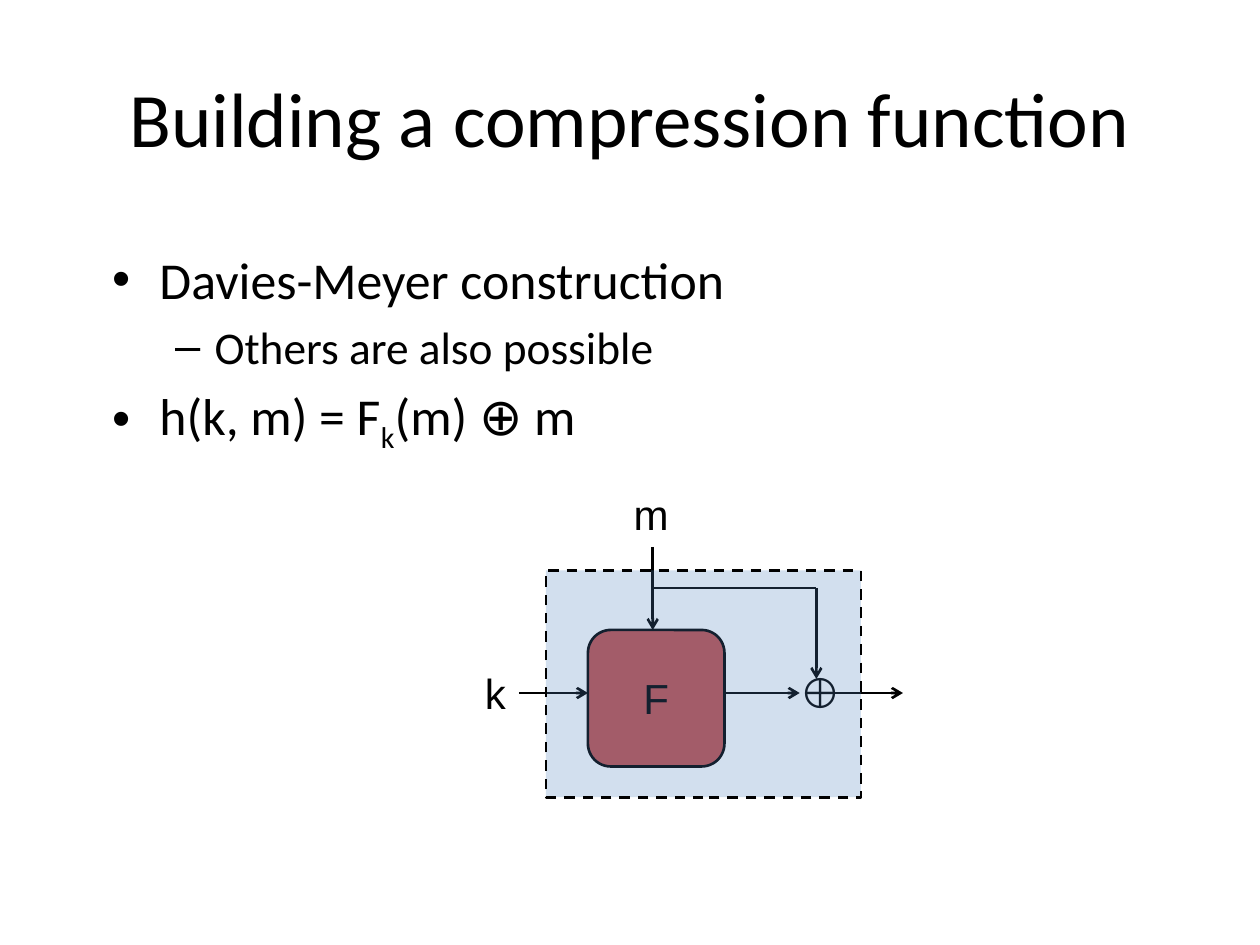
from lxml import etree
from pptx import Presentation
from pptx.dml.color import RGBColor
from pptx.enum.dml import MSO_LINE
from pptx.enum.shapes import MSO_CONNECTOR, MSO_SHAPE
from pptx.enum.text import MSO_ANCHOR, MSO_AUTO_SIZE, PP_ALIGN
from pptx.oxml.ns import qn
from pptx.util import Pt

BLACK = RGBColor(0x00, 0x00, 0x00)
RED = RGBColor(0xC0, 0x50, 0x4D)
BLUE = RGBColor(0x4F, 0x81, 0xBD)
RECTANGLE = MSO_SHAPE.RECTANGLE
ROUNDED = MSO_SHAPE.ROUNDED_RECTANGLE
STRAIGHT = MSO_CONNECTOR.STRAIGHT
DASH = MSO_LINE.DASH
MIDDLE = MSO_ANCHOR.MIDDLE
TOP = MSO_ANCHOR.TOP
CENTER = PP_ALIGN.CENTER
FIT_SHAPE = MSO_AUTO_SIZE.SHAPE_TO_FIT_TEXT

TITLE_FONT = {"name": "Calibri", "size": Pt(44)}
LABEL_FONT = {"name": "Arial", "size": Pt(24)}
LEVELS = (
    {"size": 29.6, "margin": 27, "hanging": 27, "bullet": "•"},
    {"size": 25.9, "margin": 58.5, "hanging": 22.5, "bullet": "–"},
)


def assign(target, values):
    for name, value in values.items():
        setattr(target, name, value)


class SlideBuilder:
    def __init__(self, slide):
        self.slide = slide
        self.line_format = {"width": Pt(1.5)}

    def text_box(self, box, frame_format):
        shape = self.slide.shapes.add_textbox(*map(Pt, box))
        assign(shape.text_frame, frame_format)
        return shape.text_frame

    def run(self, paragraph, text, font, baseline=0):
        run = paragraph.add_run()
        run.text = text
        assign(run.font, font)
        run.font.color.rgb = BLACK
        if baseline:
            run.font._element.set("baseline", str(baseline * 1000))

    def title(self, text, box):
        frame = self.text_box(box, {"word_wrap": True, "vertical_anchor": MIDDLE})
        frame.paragraphs[0].alignment = CENTER
        self.run(frame.paragraphs[0], text, TITLE_FONT)

    def bullets(self, items, box):
        frame = self.text_box(box, {"word_wrap": True, "vertical_anchor": TOP})
        for index, (level, runs) in enumerate(items):
            paragraph = frame.add_paragraph() if index else frame.paragraphs[0]
            style = LEVELS[level]
            assign(paragraph, {"level": level, "space_before": Pt(style["size"] * 0.2)})
            properties = paragraph._p.get_or_add_pPr()
            properties.set("marL", str(Pt(style["margin"])))
            properties.set("indent", str(-Pt(style["hanging"])))
            etree.SubElement(properties, qn("a:buFont"), typeface="Arial")
            etree.SubElement(properties, qn("a:buChar"), char=style["bullet"])
            font = {"name": "Calibri", "size": Pt(style["size"])}
            for text, baseline in runs:
                self.run(paragraph, text, font, baseline)

    def label(self, text, box):
        frame = self.text_box(box, {"word_wrap": False, "auto_size": FIT_SHAPE})
        self.run(frame.paragraphs[0], text, LABEL_FONT)

    def outline(self, line):
        assign(line, self.line_format)
        line.color.rgb = BLACK

    def block(self, kind, box, color, opacity=100):
        shape = self.slide.shapes.add_shape(kind, *map(Pt, box))
        shape.shadow.inherit = False
        shape.fill.solid()
        shape.fill.fore_color.rgb = color
        self.outline(shape.line)
        if opacity < 100:
            color_element = shape._element.spPr.find(".//" + qn("a:srgbClr"))
            etree.SubElement(color_element, qn("a:alpha"), val=str(opacity * 1000))
        return shape

    def connector(self, start, end, arrow=True):
        shape = self.slide.shapes.add_connector(STRAIGHT, *map(Pt, start + end))
        self.outline(shape.line)
        if arrow:
            etree.SubElement(shape.line._get_or_add_ln(), qn("a:tailEnd"), type="arrow")
        etree.SubElement(shape._element.spPr, qn("a:effectLst"))


def main():
    presentation = Presentation()
    assign(presentation, {"slide_width": Pt(720), "slide_height": Pt(540)})
    slide = presentation.slides.add_slide(presentation.slide_layouts[6])
    builder = SlideBuilder(slide)

    builder.title("Building a compression function", (36, 21.6, 648, 90))
    builder.bullets(
        (
            (0, [("Davies-Meyer construction", 0)]),
            (1, [("Others are also possible", 0)]),
            (0, [("h(k, m) = F", 0), ("k", -25), ("(m) ⊕ m", 0)]),
        ),
        (57, 138, 605.5, 117),
    )

    message_x, output_x = 373, 466.5
    branch_y, middle_y = 336, 396
    function_box = builder.block(ROUNDED, (336, 360, 78, 78), RED)
    function_box.adjustments[0] = 0.167
    for text, left, top, width in (
        ("F", 360.5, 381, 29.5),
        ("k", 270, 378, 26.6),
        ("m", 355, 275.8, 34.6),
        ("⊕", 450, 377.3, 33),
    ):
        builder.label(text, (left, top, width, 36.7))

    builder.connector((message_x, branch_y), (output_x, branch_y), arrow=False)
    builder.connector((message_x, 312.5), (message_x, 360))
    builder.connector((output_x, branch_y), (output_x, 388))
    for start_x, end_x in ((296.5, 336), (414, 457), (476.5, 516)):
        builder.connector((start_x, middle_y), (end_x, middle_y))

    boundary = builder.block(RECTANGLE, (312, 326, 180, 129.6), BLUE, opacity=25)
    boundary.line.dash_style = DASH
    presentation.save("out.pptx")


if __name__ == "__main__":
    main()
